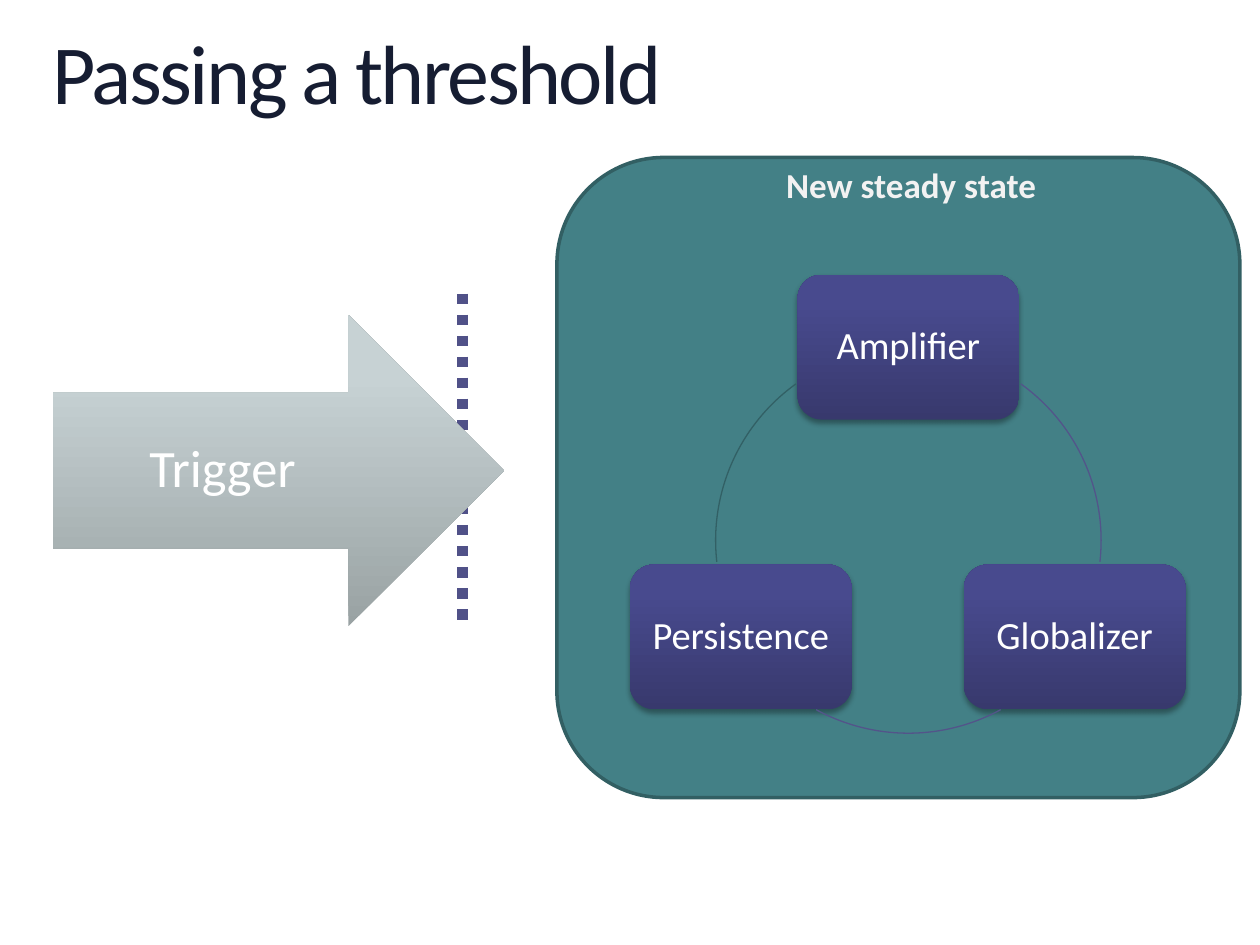
from lxml import etree
from pptx import Presentation
from pptx.dml.color import RGBColor
from pptx.enum.dml import MSO_LINE
from pptx.enum.shapes import MSO_CONNECTOR, MSO_SHAPE
from pptx.enum.text import MSO_ANCHOR, PP_ALIGN
from pptx.oxml import parse_xml
from pptx.oxml.ns import nsdecls, qn
from pptx.util import Inches, Pt

LINE = MSO_CONNECTOR.STRAIGHT
DOT = MSO_LINE.ROUND_DOT
ROUND, ARROW, ARC = MSO_SHAPE.ROUNDED_RECTANGLE, MSO_SHAPE.RIGHT_ARROW, MSO_SHAPE.ARC
TOP, MIDDLE = MSO_ANCHOR.TOP, MSO_ANCHOR.MIDDLE
LEFT, CENTER = PP_ALIGN.LEFT, PP_ALIGN.CENTER


def rgb(code):
    return RGBColor.from_string(code)


def write(shape, text, size, color, anchor, align, pads, wrap=True, bold=False, space=0.9):
    frame = shape.text_frame
    look = {"word_wrap": wrap, "vertical_anchor": anchor}
    sides = ("margin_left", "margin_top", "margin_right", "margin_bottom")
    look.update({side: Inches(pad) for side, pad in zip(sides, pads)})
    for name, value in look.items():
        setattr(frame, name, value)
    para = frame.paragraphs[0]
    para.alignment = align
    para.line_spacing = space
    run = para.add_run()
    run.text = text
    for name, value in {"name": "Calibri", "size": Pt(size), "bold": bold}.items():
        setattr(run.font, name, value)
    run.font.color.rgb = rgb(color)
    return run


deck = Presentation()
deck.slide_width, deck.slide_height = Inches(10), Inches(7.5)
slide = deck.slides.add_slide(deck.slide_layouts[5])
shapes = slide.shapes

title = shapes.title
spot = {"left": 0.42, "top": 0.25, "width": 9.17, "height": 0.73}
for name, value in spot.items():
    setattr(title, name, Inches(value))
run = write(title, "Passing a threshold", 48, "161D32", TOP, LEFT, (0, 0, 0, 0))
run.font._element.set("spc", "-150")

limit = shapes.add_connector(LINE, Inches(3.67), Inches(2.33), Inches(3.67), Inches(5))
limit.line.color.rgb = rgb("505188")
limit.line.width = Pt(6)
limit.line.dash_style = DOT
etree.SubElement(limit._element.spPr, qn("a:effectLst"))

state = shapes.add_shape(ROUND, Inches(4.42), Inches(1.25), Inches(5.42), Inches(5.08))
state.shadow.inherit = False
state.fill.solid()
state.fill.fore_color.rgb = rgb("438086")
state.line.color.rgb = rgb("325F63")
state.line.width = Pt(2)

wide, high = 1.76, 1.15
blocks = [
    (ARROW, 0.42, 2.5, 3.58, 2.47, "Trigger", 30, ("99A2A3", "C7D2D4"), (0.12, 0.12, 0.39, 0.12)),
]
for text, left, top in (("Amplifier", 6.33, 2.18), ("Globalizer", 7.65, 4.48), ("Persistence", 5, 4.48)):
    blocks.append((ROUND, left, top, wide, high, text, 22, ("38396D", "484A8E"), (0.09,) * 4))

for kind, left, top, width, height, text, size, shades, pads in blocks:
    block = shapes.add_shape(kind, Inches(left), Inches(top), Inches(width), Inches(height))
    block.shadow.inherit = False
    block.line.fill.background()
    block.fill.gradient()
    block.fill.gradient_angle = 90
    for stop, shade, place in zip(block.fill.gradient_stops, shades, (0, 0.8)):
        stop.color.rgb = rgb(shade)
        stop.position = place
    if kind == ROUND:
        block._element.spPr.find(qn("a:effectLst")).append(parse_xml(
            f'<a:outerShdw {nsdecls("a")} blurRad="40000" dist="23000" dir="5400000" rotWithShape="0">'
            '<a:srgbClr val="000000"><a:alpha val="35000"/></a:srgbClr></a:outerShdw>'))
    write(block, text, size, "FFFFFF", MIDDLE, CENTER, pads)

for start, end, color in ((305.7, 6.4, "53548A"), (61.4, 118.6, "53548A"), (173.6, 234.3, "326065")):
    arc = shapes.add_shape(ARC, Inches(5.68), Inches(2.76), Inches(3.06), Inches(3.06))
    arc.shadow.inherit = False
    arc.fill.background()
    arc.line.color.rgb = rgb(color)
    arc.line.width = Pt(0.75)
    arc.adjustments[0] = start * 0.6
    arc.adjustments[1] = end * 0.6

label = shapes.add_textbox(Inches(6.14), Inches(1.25), Inches(2.2), Inches(0.44))
write(label, "New steady state", 20, "F2F2F2", TOP, LEFT, (0.1, 0.05, 0.1, 0.05),
      wrap=False, bold=True, space=1.0)

deck.save("out.pptx")
